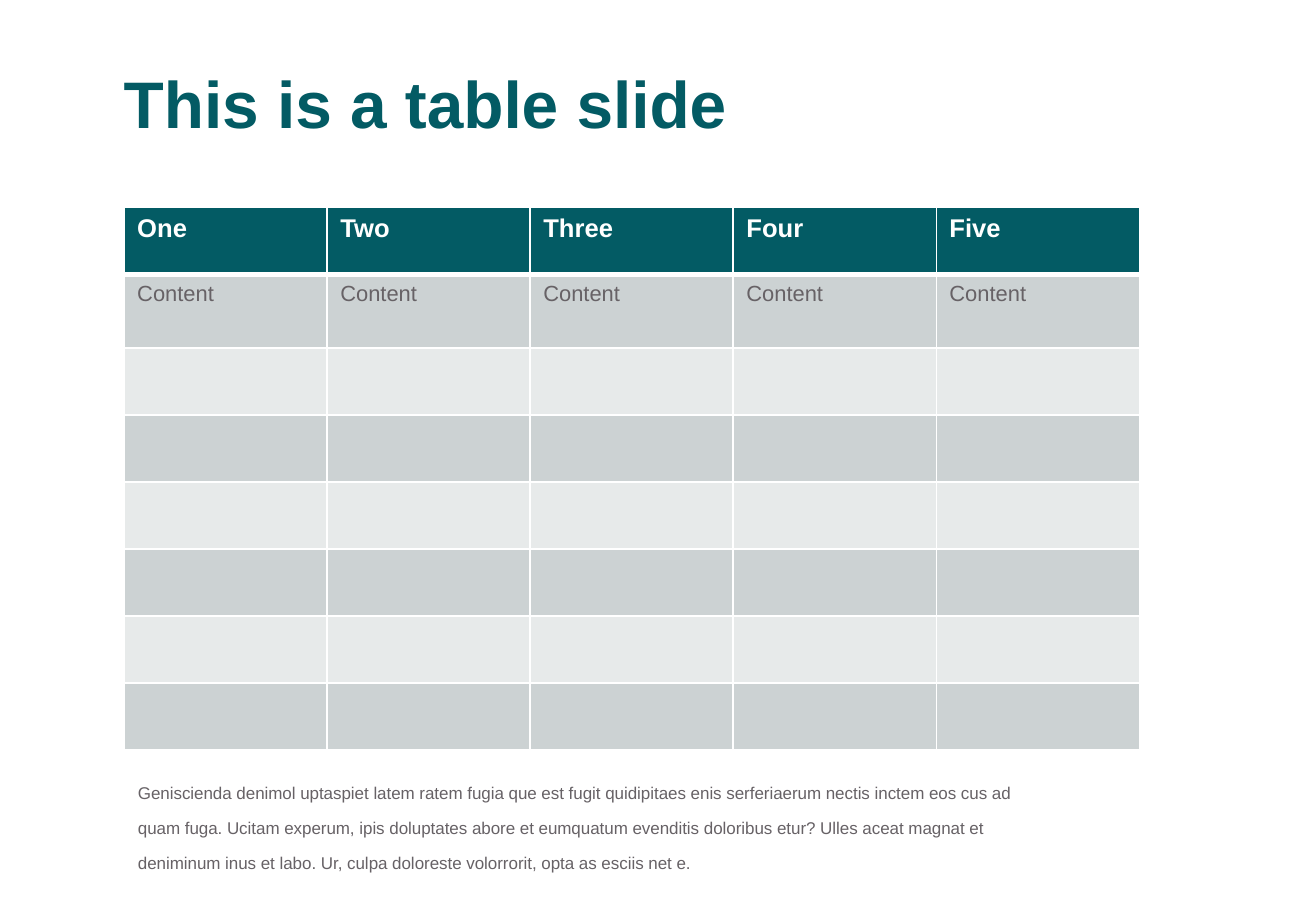
"""Build a title slide with a banded five-column table and a caption."""
from lxml import etree
from pptx import Presentation
from pptx.dml.color import RGBColor
from pptx.enum import text
from pptx.oxml import ns
from pptx.util import Pt

COLORS = {"teal": "035B64", "white": "FFFFFF", "gray": "676266", "dark_band": "CCD2D3", "light_band": "E7EAEA"}
HEADINGS = ["One", "Two", "Three", "Four", "Five"]
ROW_HEIGHTS = [36.7, 40] + [36.7] * 6
CAPTION = (
    "Geniscienda denimol uptaspiet latem ratem fugia que est fugit quidipitaes enis serferiaerum "
    "nectis inctem eos cus ad quam fuga. Ucitam experum, ipis doluptates abore et eumquatum "
    "evenditis doloribus etur? Ulles aceat magnat et deniminum inus et labo. Ur, culpa doloreste "
    "volorrorit, opta as esciis net e."
)


def add_span(para, words, size, color, bold=False):
    span = para.add_run()
    span.text = words
    span.font.name = "Arial"
    span.font.size = Pt(size)
    span.font.bold = bold
    span.font.color.rgb = RGBColor.from_string(COLORS[color])
    return span


def add_border(cell, side, width):
    line = etree.SubElement(cell._tc.get_or_add_tcPr(), ns.qn(f"a:{side}"), w=str(Pt(width)))
    fill = etree.SubElement(line, ns.qn("a:solidFill"))
    etree.SubElement(fill, ns.qn("a:srgbClr"), val=COLORS["white"])


deck = Presentation()
deck.slide_width, deck.slide_height = Pt(720), Pt(504)
page = deck.slides.add_slide(deck.slide_layouts[5])

title = page.shapes.title
title.left, title.top, title.width, title.height = Pt(60.5), Pt(26.6), Pt(622.8), Pt(86.4)
title.text_frame.vertical_anchor = text.MSO_ANCHOR.TOP
title.text_frame.margin_top = Pt(7.5)
para = title.text_frame.paragraphs[0]
para.alignment = text.PP_ALIGN.LEFT
add_span(para, "This is a table slide", 36, "teal", True)

frame = page.shapes.add_table(len(ROW_HEIGHTS), len(HEADINGS), Pt(67.9), Pt(113.6), Pt(555.5), Pt(sum(ROW_HEIGHTS)))
table = frame.table
for column in table.columns:
    column.width = Pt(111.1)
for index, height in enumerate(ROW_HEIGHTS):
    table.rows[index].height = Pt(height)
    for heading, cell in zip(HEADINGS, table.rows[index].cells):
        for side in ("lnL", "lnR", "lnT", "lnB"):
            header_edge = (index, side) in ((0, "lnB"), (1, "lnT"))
            add_border(cell, side, 3 if header_edge else 1)
        band = "teal" if index == 0 else "dark_band" if index % 2 else "light_band"
        cell.fill.solid()
        cell.fill.fore_color.rgb = RGBColor.from_string(COLORS[band])
        if index == 0:
            add_span(cell.text_frame.paragraphs[0], heading, 14, "white", True)
        elif index == 1:
            add_span(cell.text_frame.paragraphs[0], "Content", 12, "gray")

box = page.shapes.add_textbox(Pt(68.4), Pt(422.6), Pt(504), Pt(46))
box.text_frame.word_wrap = True
caption = add_span(box.text_frame.paragraphs[0], CAPTION, 16, "gray")
caption.font._element.set("baseline", "30000")

deck.save("out.pptx")
